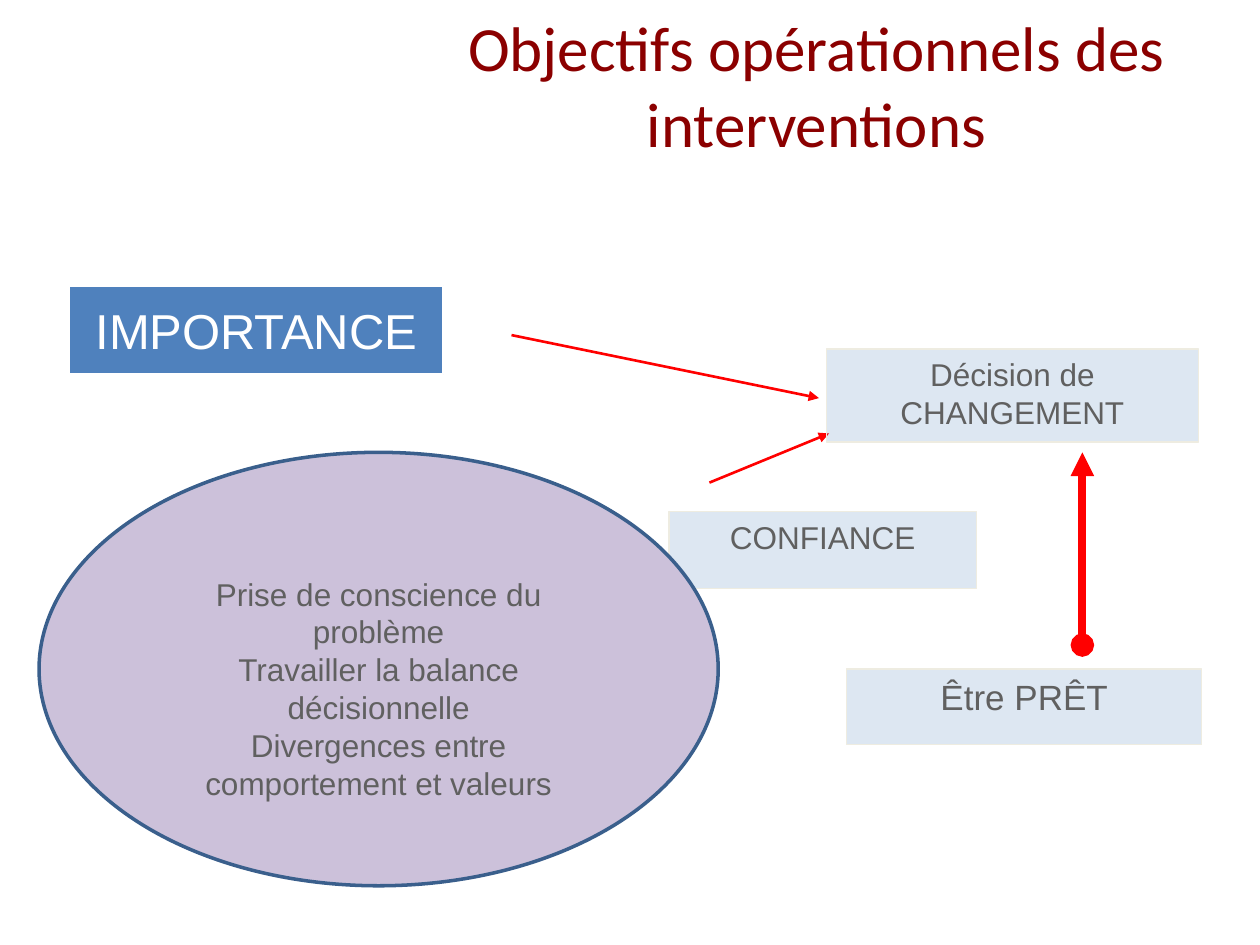
"""Builds the slide on the operational goals of interventions."""
import pptx
import pptx.dml.color
import pptx.enum.shapes
import pptx.enum.text
import pptx.oxml
import pptx.oxml.ns
import pptx.util

Pt = pptx.util.Pt
RGBColor = pptx.dml.color.RGBColor
Anchor = pptx.enum.text.MSO_ANCHOR
Shape = pptx.enum.shapes.MSO_SHAPE
Line = pptx.enum.shapes.MSO_CONNECTOR

MAROON = RGBColor(0x8B, 0x00, 0x00)
BLUE = RGBColor(0x4F, 0x81, 0xBD)
NAVY = RGBColor(0x3A, 0x5F, 0x8C)
LILAC = RGBColor(0xCC, 0xC1, 0xDA)
CREAM = RGBColor(0xEE, 0xEC, 0xE1)
GREY = RGBColor(0x60, 0x60, 0x60)
WHITE = RGBColor(0xFF, 0xFF, 0xFF)
RED = RGBColor(0xFF, 0x00, 0x00)


def make(tag, **attrs):
    node = pptx.oxml.parse_xml(f"<a:{tag} {pptx.oxml.ns.nsdecls('a')}/>")
    for name, value in attrs.items():
        node.set(name, value)
    return node


def write(shape, text, size=18, color=GREY, font="Arial",
          anchor=Anchor.TOP, wrap=True, top=3.6, base=3.6):
    frame = shape.text_frame
    frame.word_wrap = wrap
    frame.vertical_anchor = anchor
    frame.margin_top, frame.margin_bottom = Pt(top), Pt(base)
    frame.text = text
    for para in frame.paragraphs:
        para.alignment = pptx.enum.text.PP_ALIGN.CENTER
        para.font.size = Pt(size)
        para.font.name = font
        para.font.color.rgb = color


def add_title(slide, text, *place):
    box = slide.shapes.add_textbox(*map(Pt, place))
    write(box, text, size=36, color=MAROON, font="Calibri",
          anchor=Anchor.BOTTOM, base=7.2)


def add_box(slide, text, *place, kind=Shape.RECTANGLE, fill=BLUE,
            alpha=None, edge=CREAM, width=0.75, **style):
    box = slide.shapes.add_shape(kind, *map(Pt, place))
    box.shadow.inherit = False
    box.fill.solid()
    box.fill.fore_color.rgb = fill
    if alpha:
        tint = box.fill._xPr.find(".//" + pptx.oxml.ns.qn("a:srgbClr"))
        tint.append(make("alpha", val=str(alpha * 1000)))
    box.line.color.rgb = edge
    box.line.width = Pt(width)
    write(box, text, **style)


def add_arrow(slide, *ends, width=1.5, head=None):
    arrow = slide.shapes.add_connector(Line.STRAIGHT, *map(Pt, ends))
    arrow.line.color.rgb = RED
    arrow.line.width = Pt(width)
    stroke = arrow.line._get_or_add_ln()
    if head:
        stroke.append(make("headEnd", type=head))
    stroke.append(make("tailEnd", type="triangle"))
    arrow._element.spPr.append(make("effectLst"))


def main():
    deck = pptx.Presentation()
    deck.slide_width, deck.slide_height = Pt(720), Pt(540)
    slide = deck.slides.add_slide(deck.slide_layouts[6])

    add_title(slide, "Objectifs opérationnels des interventions",
              216.7, 20.2, 499.7, 78.5)
    add_box(slide, "CONFIANCE", 382.3, 292.3, 175.7, 43.9, alpha=19)
    add_box(slide, "IMPORTANCE", 39.6, 163.4, 213.8, 50.4, edge=WHITE,
            width=1, size=28, color=WHITE, anchor=Anchor.MIDDLE, wrap=False)
    add_box(slide, "Être PRÊT", 483.8, 382.3, 203, 43.2, alpha=19, size=20)
    add_arrow(slide, 292.3, 191.5, 468, 227.5)
    add_arrow(slide, 405.4, 275.8, 473.8, 247.7)
    add_box(slide, "Décision de\vCHANGEMENT", 472.3, 199.4, 212.4, 53.3,
            alpha=19)
    add_arrow(slide, 618.5, 368.6, 618.5, 258.5, width=4.5, head="oval")
    goals = ["Prise de conscience du problème",
             "Travailler la balance décisionnelle",
             "Divergences entre comportement et valeurs"]
    add_box(slide, "\n".join(goals), 22.3, 258.5, 388.1, 247.7,
            kind=Shape.OVAL, fill=LILAC, edge=NAVY, width=2,
            anchor=Anchor.MIDDLE, top=25.2)
    deck.save("out.pptx")


if __name__ == "__main__":
    main()
